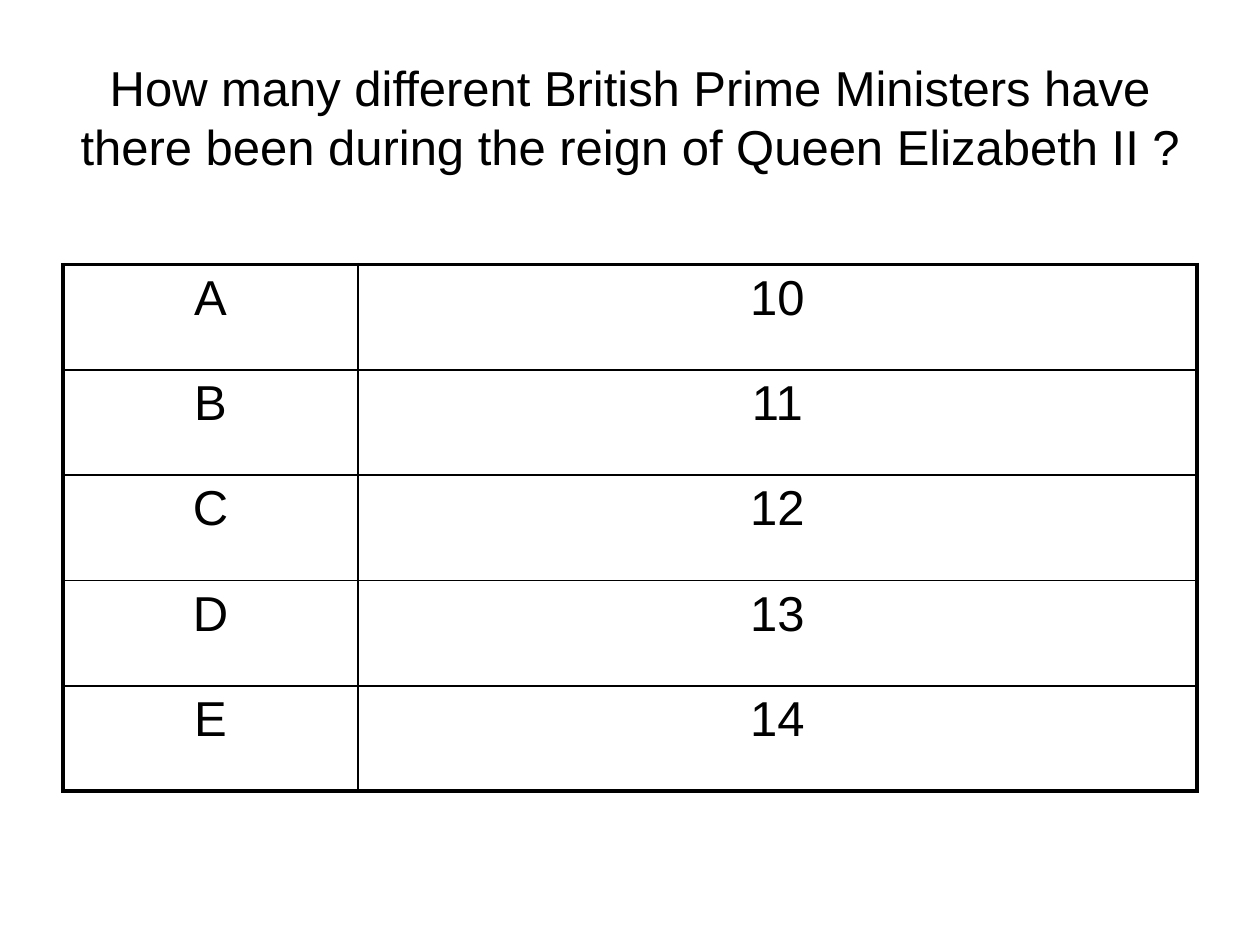
from pptx import Presentation
from pptx.dml.color import RGBColor as RGB
from pptx.enum.text import MSO_ANCHOR as Anchor, PP_ALIGN as Align
from pptx.oxml.ns import qn
from pptx.util import Inches, Pt
from lxml.etree import SubElement as Sub

COLORS = {"ink": "000000", "paper": "FFFFFF"}
FONT, SIZE = "Arial", 28
THICK, THIN = 2.25, 1

QUESTION = ("How many different British Prime Ministers have "
            "there been during the reign of Queen Elizabeth II ?")
ANSWERS = [("A", "10"), ("B", "11"), ("C", "12"), ("D", "13"), ("E", "14")]


def add_text(para, text):
    """Add one centred run in the quiz style."""
    para.alignment = Align.CENTER
    run = para.add_run()
    run.text = text
    run.font.name = FONT
    run.font.size = Pt(SIZE)
    run.font.color.rgb = RGB.from_string(COLORS["ink"])


def set_lead(para, share):
    """Set the space before a paragraph as a share of its line."""
    lead = Sub(para._p.get_or_add_pPr(), qn("a:spcBef"))
    Sub(lead, qn("a:spcPct"), val=str(int(share * 100000)))


def set_edge(cell, side, width):
    """Draw one border of a cell."""
    line = Sub(cell._tc.get_or_add_tcPr(), qn("a:ln" + side), w=str(Pt(width)))
    fill = Sub(line, qn("a:solidFill"))
    Sub(fill, qn("a:srgbClr"), val=COLORS["ink"])


def add_title(slide, box, text):
    title = slide.shapes.title
    title.left, title.top, title.width, title.height = box
    frame = title.text_frame
    frame.word_wrap = True
    frame.vertical_anchor = Anchor.MIDDLE
    add_text(frame.paragraphs[0], text)


def add_grid(slide, box, rows, shares):
    wide, high = box[2:]
    count, last = len(rows), len(shares) - 1
    table = slide.shapes.add_table(count, len(shares), *box).table
    table.first_row = table.horz_banding = False
    for col, share in zip(table.columns, shares):
        col.width = int(wide * share)
    for r, row in enumerate(rows):
        table.rows[r].height = high // count
        for c, text in enumerate(row):
            cell = table.cell(r, c)
            para = cell.text_frame.paragraphs[0]
            add_text(para, text)
            set_lead(para, 0.2)
            # Heavy frame outside, fine rules inside
            outer = {"L": c == 0, "R": c == last,
                     "T": r == 0, "B": r == count - 1}
            for side, edge in outer.items():
                set_edge(cell, side, THICK if edge else THIN)
            cell.fill.background()


def main():
    prs = Presentation()
    prs.slide_width, prs.slide_height = Inches(10), Inches(7.5)
    wide, high = prs.slide_width, prs.slide_height
    slide = prs.slides.add_slide(prs.slide_layouts[5])
    back = slide.background.fill
    back.solid()
    back.fore_color.rgb = RGB.from_string(COLORS["paper"])

    # Question above, answers below, with equal side margins
    left, span = int(wide * 0.05), int(wide * 0.9)
    add_title(slide, (left, int(high * 0.04), span, high // 6), QUESTION)
    add_grid(slide, (left, int(high * 0.28), span, Inches(4.18)),
             ANSWERS, (0.26, 0.74))
    prs.save("out.pptx")


if __name__ == "__main__":
    main()
